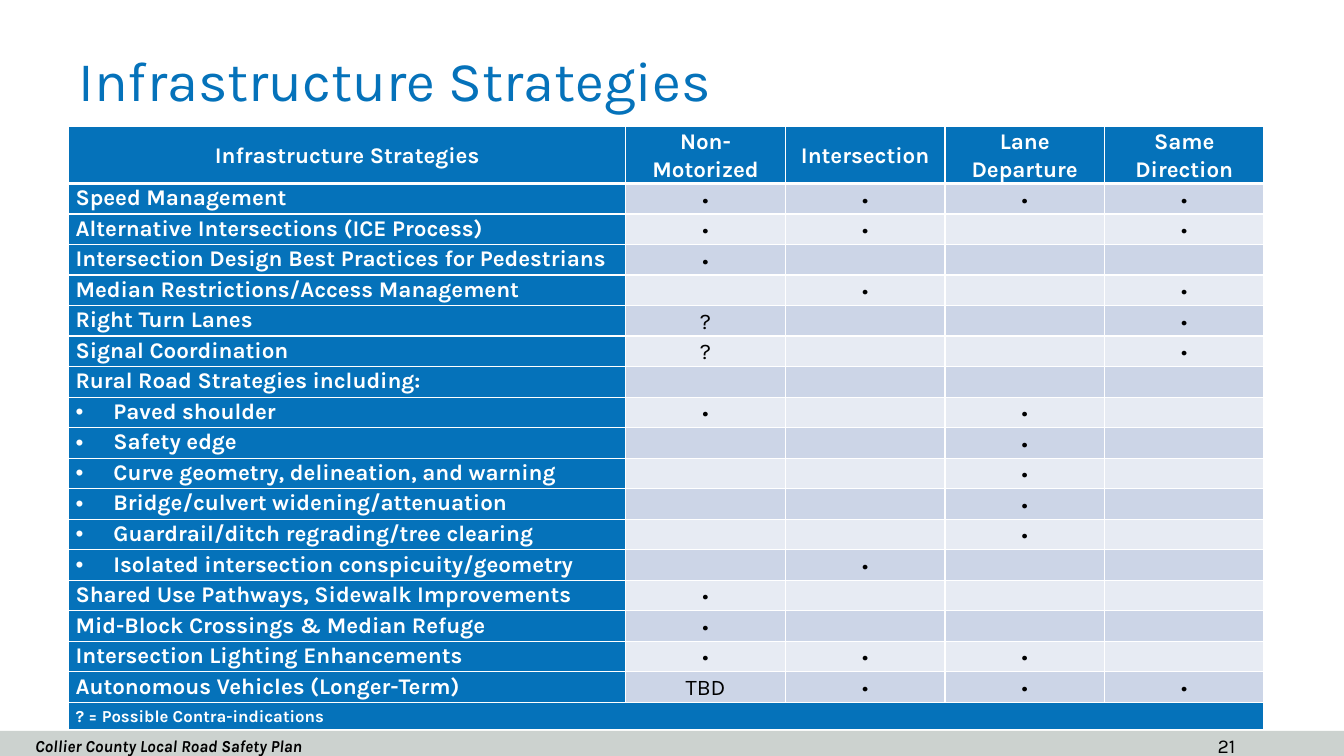
import pptx
import pptx.util
import pptx.dml.color
import pptx.enum.shapes
import pptx.enum.text
import pptx.oxml
from lxml import etree

Pt = pptx.util.Pt
ALIGN = pptx.enum.text.PP_ALIGN
ANCHOR = pptx.enum.text.MSO_ANCHOR

TITLE = "Infrastructure Strategies"
FOOTER = "Collier County Local Road Safety Plan"
PAGE = "21"
HEADERS = ["Infrastructure Strategies", "Non-Motorized", "Intersection",
           "Lane Departure", "Same Direction"]
# Strategy, whether it is a bulleted sub-item, then one mark per emphasis area
STRATEGIES = [
    ("Speed Management", False, "•", "•", "•", "•"),
    ("Alternative Intersections (ICE Process)", False, "•", "•", "", "•"),
    ("Intersection Design Best Practices for Pedestrians", False, "•", "", "", ""),
    ("Median Restrictions/Access Management", False, "", "•", "", "•"),
    ("Right Turn Lanes", False, "?", "", "", "•"),
    ("Signal Coordination", False, "?", "", "", "•"),
    ("Rural Road Strategies including:", False, "", "", "", ""),
    ("Paved shoulder", True, "•", "", "•", ""),
    ("Safety edge", True, "", "", "•", ""),
    ("Curve geometry, delineation, and warning", True, "", "", "•", ""),
    ("Bridge/culvert widening/attenuation", True, "", "", "•", ""),
    ("Guardrail/ditch regrading/tree clearing", True, "", "", "•", ""),
    ("Isolated intersection conspicuity/geometry", True, "", "•", "", ""),
    ("Shared Use Pathways, Sidewalk Improvements", False, "•", "", "", ""),
    ("Mid-Block Crossings & Median Refuge", False, "•", "", "", ""),
    ("Intersection Lighting Enhancements", False, "•", "•", "•", ""),
    ("Autonomous Vehicles (Longer-Term)", False, "TBD", "•", "•", "•"),
]
NOTE = "? = Possible Contra-indications"

FONT = "Karla"
COLORS = {"blue": "0572BA", "band_dark": "CCD5E7", "band_light": "E7EBF3",
          "bar": "CCD2CF", "white": "FFFFFF", "black": "000000"}
SLIDE_W, SLIDE_H = 960, 540
BAR_TOP = 522
TABLE_LEFT, TABLE_TOP = 49, 90
COL_WIDTHS = [398, 114, 114, 114, 114]
HEADER_H, ROW_H, NOTE_H = 40, 21.8, 19.6
BULLET_INDENT = 27


def rgb(name):
    return pptx.dml.color.RGBColor.from_string(COLORS[name])


def style_run(p, size, color, bold=False, italic=False):
    for r in p.runs:
        r.font.name = FONT
        r.font.size = Pt(size)
        r.font.bold = bold
        r.font.italic = italic
        r.font.color.rgb = rgb(color)


def add_text(slide, box, text, size, color, bold=False, italic=False,
             anchor=ANCHOR.TOP, spacing=None):
    tf = slide.shapes.add_textbox(*[Pt(v) for v in box]).text_frame
    tf.word_wrap = True
    tf.vertical_anchor = anchor
    p = tf.paragraphs[0]
    p.text = text
    p.line_spacing = spacing
    style_run(p, size, color, bold, italic)


def add_bullet(p):
    pPr = p._p.get_or_add_pPr()
    pPr.set("marL", str(Pt(BULLET_INDENT)))
    pPr.set("indent", str(-Pt(BULLET_INDENT)))
    etree.SubElement(pPr, pptx.oxml.ns.qn("a:buFont")).set("typeface", "Arial")
    etree.SubElement(pPr, pptx.oxml.ns.qn("a:buChar")).set("char", "•")


def set_borders(cell, top=1, bottom=1):
    tcPr = cell._tc.get_or_add_tcPr()
    for side, width in (("L", 1), ("R", 1), ("T", top), ("B", bottom)):
        tcPr.append(pptx.oxml.parse_xml(
            f'<a:ln{side} {pptx.oxml.ns.nsdecls("a")} w="{Pt(width)}"><a:solidFill>'
            f'<a:srgbClr val="{COLORS["white"]}"/></a:solidFill></a:ln{side}>'))


def fill_cell(cell, text, fill, color="white", size=16, bold=True, centered=False,
              bulleted=False, anchor=ANCHOR.MIDDLE, top=1, bottom=1):
    set_borders(cell, top, bottom)
    cell.fill.solid()
    cell.fill.fore_color.rgb = rgb(fill)
    cell.margin_left = cell.margin_right = Pt(5)
    cell.margin_top = cell.margin_bottom = 0
    cell.vertical_anchor = anchor
    p = cell.text_frame.paragraphs[0]
    p.line_spacing = 1.07
    p.alignment = ALIGN.CENTER if centered else ALIGN.LEFT
    if bulleted:
        add_bullet(p)
    if text:
        p.text = text
        style_run(p, size, color, bold)
    else:  # keeps an empty cell from stretching its row
        end = etree.SubElement(p._p, pptx.oxml.ns.qn("a:endParaRPr"))
        end.set("sz", str(size * 100))
        etree.SubElement(end, pptx.oxml.ns.qn("a:latin")).set("typeface", FONT)


def add_strategy_table(slide):
    heights = [HEADER_H] + [ROW_H] * len(STRATEGIES) + [NOTE_H]
    table = slide.shapes.add_table(
        len(heights), len(HEADERS), Pt(TABLE_LEFT), Pt(TABLE_TOP),
        Pt(sum(COL_WIDTHS)), Pt(sum(heights))).table
    for column, width in zip(table.columns, COL_WIDTHS):
        column.width = Pt(width)
    for row, height in zip(table.rows, heights):
        row.height = Pt(height)

    for col, header in enumerate(HEADERS):
        fill_cell(table.cell(0, col), header, "blue", centered=True, bottom=3)
    for row, (name, bulleted, *marks) in enumerate(STRATEGIES, 1):
        top = 3 if row == 1 else 1
        band = "band_dark" if row % 2 else "band_light"
        fill_cell(table.cell(row, 0), name, "blue", bulleted=bulleted,
                  anchor=ANCHOR.TOP, top=top)
        for col, mark in enumerate(marks, 1):
            fill_cell(table.cell(row, col), mark, band, "black", bold=False,
                      centered=True, top=top)

    last = len(heights) - 1
    table.cell(last, 0).merge(table.cell(last, len(HEADERS) - 1))
    fill_cell(table.cell(last, 0), NOTE, "blue", size=12)


def main():
    prs = pptx.Presentation()
    prs.slide_width, prs.slide_height = Pt(SLIDE_W), Pt(SLIDE_H)
    slide = prs.slides.add_slide(prs.slide_layouts[6])

    bar = slide.shapes.add_shape(
        pptx.enum.shapes.MSO_SHAPE.RECTANGLE, 0, Pt(BAR_TOP),
        Pt(SLIDE_W), Pt(SLIDE_H - BAR_TOP))
    bar.shadow.inherit = False
    bar.fill.solid()
    bar.fill.fore_color.rgb = rgb("bar")
    bar.line.fill.background()

    add_text(slide, (49, 34.5, 764, 37.5), TITLE, 40, "blue", spacing=0.9)
    add_strategy_table(slide)
    add_text(slide, (18, 525.6, 592.6, 14.4), FOOTER, 12, "black", bold=True,
             italic=True, anchor=ANCHOR.MIDDLE)
    add_text(slide, (862.6, 520.5, 41, 19.5), PAGE, 14, "black")
    prs.save("out.pptx")


if __name__ == "__main__":
    main()
